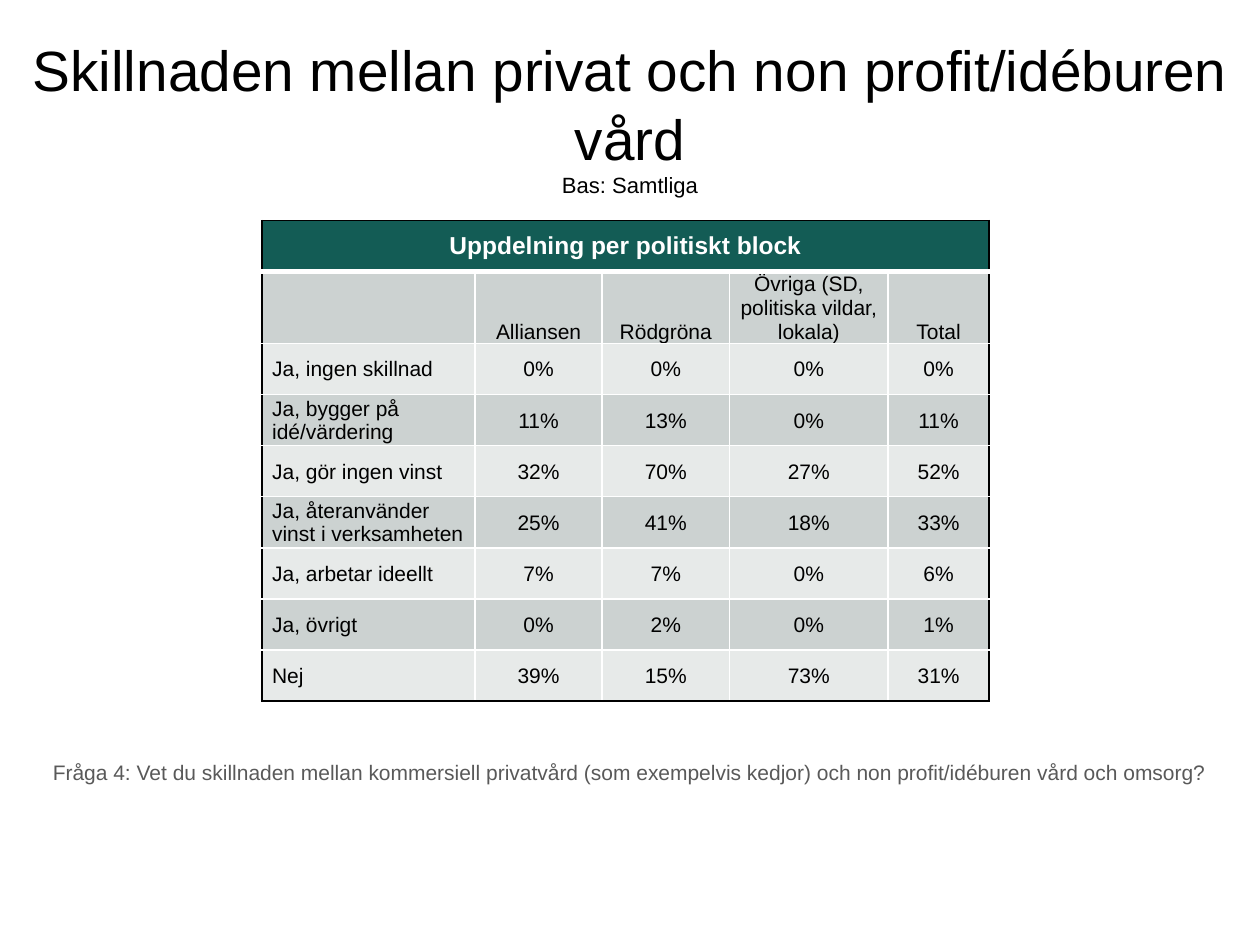
from lxml import etree
from pptx import Presentation
from pptx.dml.color import RGBColor
from pptx.enum.text import MSO_ANCHOR, MSO_AUTO_SIZE, PP_ALIGN
from pptx.oxml.ns import qn
from pptx.util import Inches, Pt

LEFT, CENTER = PP_ALIGN.LEFT, PP_ALIGN.CENTER
MIDDLE, BOTTOM = MSO_ANCHOR.MIDDLE, MSO_ANCHOR.BOTTOM
GROW = MSO_AUTO_SIZE.SHAPE_TO_FIT_TEXT

FONT = "Arial"
COLORS = {
    "black": "000000",
    "white": "FFFFFF",
    "grey": "595959",
    "head": "135C55",
    "dark": "CCD2D1",
    "light": "E7EAE9",
}
WIDTHS = [1.69, 1.01, 1.01, 1.26, 0.8]
ROWS = [
    ["Uppdelning per politiskt block", "", "", "", ""],
    ["", "Alliansen", "Rödgröna", "Övriga (SD, politiska vildar, lokala)", "Total"],
    ["Ja, ingen skillnad", "0%", "0%", "0%", "0%"],
    ["Ja, bygger på idé/värdering", "11%", "13%", "0%", "11%"],
    ["Ja, gör ingen vinst", "32%", "70%", "27%", "52%"],
    ["Ja, återanvänder vinst i verksamheten", "25%", "41%", "18%", "33%"],
    ["Ja, arbetar ideellt", "7%", "7%", "0%", "6%"],
    ["Ja, övrigt", "0%", "2%", "0%", "1%"],
    ["Nej", "39%", "15%", "73%", "31%"],
]


def add_run(para, text, size, color, bold=False):
    """Add one styled run to a paragraph."""
    run = para.add_run()
    run.text = text
    font = run.font
    font.name, font.size, font.bold = FONT, Pt(size), bold
    font.color.rgb = RGBColor.from_string(COLORS[color])


def add_box(slide, top, height):
    """Add a centred text box across the slide and return its frame."""
    box = slide.shapes.add_textbox(0, Inches(top), Inches(10), Inches(height))
    frame = box.text_frame
    frame.word_wrap = True
    frame.paragraphs[0].alignment = CENTER
    return frame


def add_title(slide):
    """Add the title with its base line below."""
    frame = add_box(slide, 0.3, 1.25)
    frame.vertical_anchor = MIDDLE
    para = frame.paragraphs[0]
    add_run(para, "Skillnaden mellan privat och non profit/idéburen vård", 32.4, "black")
    para.add_line_break()
    add_run(para, "Bas: Samtliga", 12.6, "black")


def add_note(slide):
    """Add the survey question below the table."""
    frame = add_box(slide, 5.98, 0.3)
    frame.auto_size = GROW
    text = (
        "Fråga 4: Vet du skillnaden mellan kommersiell privatvård "
        "(som exempelvis kedjor) och non profit/idéburen vård och omsorg?"
    )
    add_run(frame.paragraphs[0], text, 12, "grey")


def set_edges(cell, edges):
    """Draw cell borders from (side, colour, width) triples in schema order."""
    props = cell._tc.get_or_add_tcPr()
    for spot, (side, color, width) in enumerate(edges):
        line = etree.Element(qn(f"a:ln{side}"), w=str(Pt(width)))
        fill = etree.SubElement(line, qn("a:solidFill"))
        etree.SubElement(fill, qn("a:srgbClr"), val=COLORS[color])
        props.insert(spot, line)


def fill_cell(cell, row, col, text):
    """Style one cell by its place in the table."""
    head, last = row == 0, len(ROWS) - 1
    shade = "head" if head else ("dark" if row % 2 else "light")
    cell.fill.solid()
    cell.fill.fore_color.rgb = RGBColor.from_string(COLORS[shade])
    cell.vertical_anchor = BOTTOM if row == 1 else MIDDLE
    if not head:
        cell.margin_left = Inches(0.01 if col else 0.08)
        cell.margin_top = cell.margin_right = Inches(0.01)
        cell.margin_bottom = 0
    para = cell.text_frame.paragraphs[0]
    para.alignment = CENTER if head or col else LEFT
    if text:
        add_run(para, text, 14 if head else 12, "white" if head else "black", head)
    set_edges(cell, [
        ("L", "white" if col else "black", 1),
        ("R", "black" if head or col == len(WIDTHS) - 1 else "white", 1),
        ("T", "black" if head else "white", 1),
        ("B", "black" if row == last else "white", 3 if head else 1),
    ])


def add_grid(slide):
    """Add the table of answers per political block."""
    high = Inches(3.65)
    shape = slide.shapes.add_table(
        len(ROWS), len(WIDTHS), Inches(2.08), Inches(1.75), Inches(sum(WIDTHS)), high
    )
    table = shape.table
    for column, width in zip(table.columns, WIDTHS):
        column.width = Inches(width)
    for row, texts in enumerate(ROWS):
        for col, text in enumerate(texts):
            fill_cell(table.cell(row, col), row, col, text)
    table.cell(0, 0).merge(table.cell(0, len(WIDTHS) - 1))


def main():
    """Build the slide and save it."""
    prs = Presentation()
    prs.slide_width, prs.slide_height = Inches(10), Inches(7.5)
    slide = prs.slides.add_slide(prs.slide_layouts[6])
    add_grid(slide)
    add_note(slide)
    add_title(slide)
    prs.save("out.pptx")


if __name__ == "__main__":
    main()
